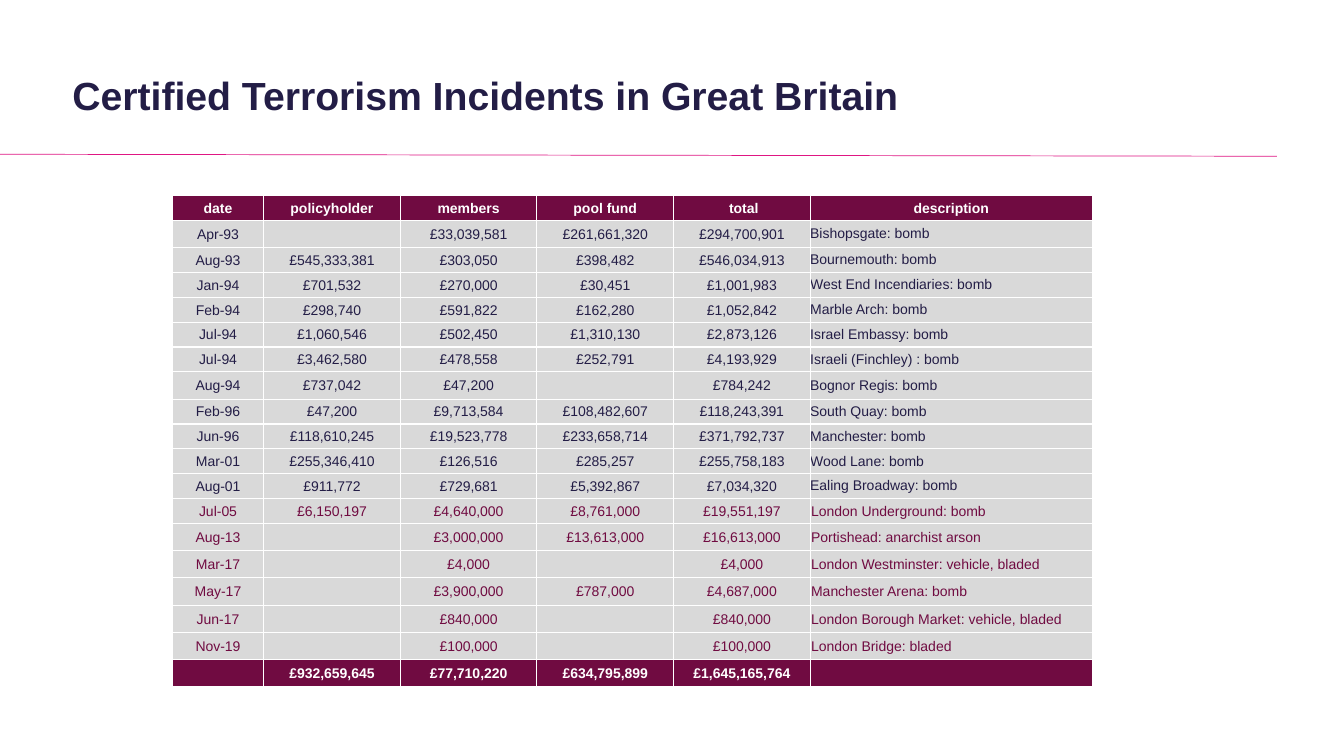
from lxml.etree import SubElement
from pptx import Presentation
from pptx.dml.color import RGBColor
from pptx.enum.shapes import MSO_CONNECTOR
from pptx.enum.text import MSO_ANCHOR, PP_ALIGN
from pptx.oxml.ns import qn
from pptx.util import Pt

COLORS = {
    "navy": "231D46",
    "plum": "700B41",
    "pink": "DF1683",
    "grey": "D9D9D9",
    "white": "FFFFFF",
}
HEADINGS = ("date", "policyholder", "members", "pool fund", " total", "description")
EARLY_INCIDENTS = [
    ("Apr-93", "", "£33,039,581", "£261,661,320", "£294,700,901", "Bishopsgate: bomb"),
    ("Aug-93", "£545,333,381", "£303,050", "£398,482", "£546,034,913", "Bournemouth: bomb"),
    ("Jan-94", "£701,532", "£270,000", "£30,451", "£1,001,983", "West End Incendiaries: bomb"),
    ("Feb-94", "£298,740", "£591,822", "£162,280", "£1,052,842", "Marble Arch: bomb"),
    ("Jul-94", "£1,060,546", "£502,450", "£1,310,130", "£2,873,126", "Israel Embassy: bomb"),
    ("Jul-94", "£3,462,580", "£478,558", "£252,791", "£4,193,929", "Israeli (Finchley) : bomb"),
    ("Aug-94", "£737,042", "£47,200", "", "£784,242", "Bognor Regis: bomb"),
    ("Feb-96", "£47,200", "£9,713,584", "£108,482,607", "£118,243,391", "South Quay: bomb"),
    ("Jun-96", "£118,610,245", "£19,523,778", "£233,658,714", "£371,792,737", "Manchester: bomb"),
    ("Mar-01", "£255,346,410", "£126,516", "£285,257", "£255,758,183", "Wood Lane: bomb"),
    ("Aug-01", "£911,772", "£729,681", "£5,392,867", "£7,034,320", "Ealing Broadway: bomb"),
]
LATE_INCIDENTS = [
    ("Jul-05", "£6,150,197", "£4,640,000", "£8,761,000", "£19,551,197", "London Underground: bomb"),
    ("Aug-13", "", "£3,000,000", "£13,613,000", "£16,613,000", "Portishead: anarchist arson"),
    ("Mar-17", "", "£4,000", "", "£4,000", "London Westminster: vehicle, bladed"),
    ("May-17", "", "£3,900,000", "£787,000", "£4,687,000", "Manchester Arena: bomb"),
    ("Jun-17", "", "£840,000", "", "£840,000", "London Borough Market: vehicle, bladed"),
    ("Nov-19", "", "£100,000", "", "£100,000", "London Bridge: bladed"),
]
TOTALS = ("", "£932,659,645", "£77,710,220", "£634,795,899", "£1,645,165,764", "")
COLUMN_WIDTHS = [65.2] + [97.6] * 4 + [201.6]
SHORT_ROW, TALL_ROW = 17.75, 19.5


def rgb(name):
    return RGBColor.from_string(COLORS[name])


def write(frame, text, *, font, size, color, bold=False, align=PP_ALIGN.LEFT, spacing=None):
    paragraph = frame.paragraphs[0]
    paragraph.alignment = align
    if spacing:
        paragraph.line_spacing = Pt(spacing)
    if not text:
        SubElement(paragraph._p, qn("a:endParaRPr"), sz=str(size * 100))
        return
    run = paragraph.add_run()
    run.text = text
    run.font.name = font
    run.font.size = Pt(size)
    run.font.bold = bold
    run.font.color.rgb = rgb(color)


class IncidentSlide:
    font = "Arial"
    title_size = 28
    table_size = 10

    def __init__(self, deck):
        self.slide = deck.slides.add_slide(deck.slide_layouts[6])

    def rule(self, start, end, color, weight):
        line = self.slide.shapes.add_connector(
            MSO_CONNECTOR.STRAIGHT, *map(Pt, start + end))
        line.line.color.rgb = rgb(color)
        line.line.width = Pt(weight)
        SubElement(line._element.spPr, qn("a:effectLst"))

    def title(self, text, left, top, width, height):
        frame = self.slide.shapes.add_textbox(
            Pt(left), Pt(top), Pt(width), Pt(height)).text_frame
        frame.word_wrap = True
        frame.vertical_anchor = MSO_ANCHOR.MIDDLE
        write(frame, text, font=self.font, size=self.title_size,
              color="navy", bold=True, spacing=31)

    def table(self, rows, left, top, widths, heights):
        grid = self.slide.shapes.add_table(
            len(rows), len(widths), Pt(left), Pt(top),
            Pt(sum(widths)), Pt(sum(heights))).table
        grid.first_row = grid.horz_banding = False
        for column, width in zip(grid.columns, widths):
            column.width = Pt(width)
        for r, (values, fill, color, bold) in enumerate(rows):
            grid.rows[r].height = Pt(heights[r])
            for c, value in enumerate(values):
                description = c == len(widths) - 1 and not bold
                self.cell(grid.cell(r, c), value, fill, color, bold,
                          PP_ALIGN.LEFT if description else PP_ALIGN.CENTER,
                          0 if description and color == "navy" else 0.7)

    def cell(self, cell, value, fill, color, bold, align, inset):
        cell.margin_left = cell.margin_right = cell.margin_top = Pt(inset)
        cell.margin_bottom = Pt(0)
        cell.vertical_anchor = MSO_ANCHOR.MIDDLE
        properties = cell._tc.get_or_add_tcPr()
        for side in ("lnL", "lnR", "lnT", "lnB"):
            border = SubElement(properties, qn(f"a:{side}"), w=str(Pt(1)))
            paint = SubElement(border, qn("a:solidFill"))
            SubElement(paint, qn("a:srgbClr"), val=COLORS["white"])
        cell.fill.solid()
        cell.fill.fore_color.rgb = rgb(fill)
        write(cell.text_frame, value, font=self.font, size=self.table_size,
              color=color, bold=bold, align=align)


def main():
    deck = Presentation()
    deck.slide_width, deck.slide_height = Pt(960), Pt(540)
    incidents = IncidentSlide(deck)
    incidents.rule((0, 110.2), (912, 111.6), "pink", 0.5)
    incidents.title("Certified Terrorism Incidents in Great Britain", 44.6, 28.8, 797.8, 80.6)

    rows = [(HEADINGS, "plum", "white", True)]
    rows += [(values, "grey", "navy", False) for values in EARLY_INCIDENTS]
    rows += [(values, "grey", "plum", False) for values in LATE_INCIDENTS]
    rows.append((TOTALS, "plum", "white", True))
    heights = [SHORT_ROW if all(values) else TALL_ROW for values, *_ in rows]
    first_late = len(EARLY_INCIDENTS) + 2
    heights[first_late:] = [TALL_ROW] * (len(rows) - first_late)
    incidents.table(rows, 123.1, 139.7, COLUMN_WIDTHS, heights)
    deck.save("out.pptx")


if __name__ == "__main__":
    main()
